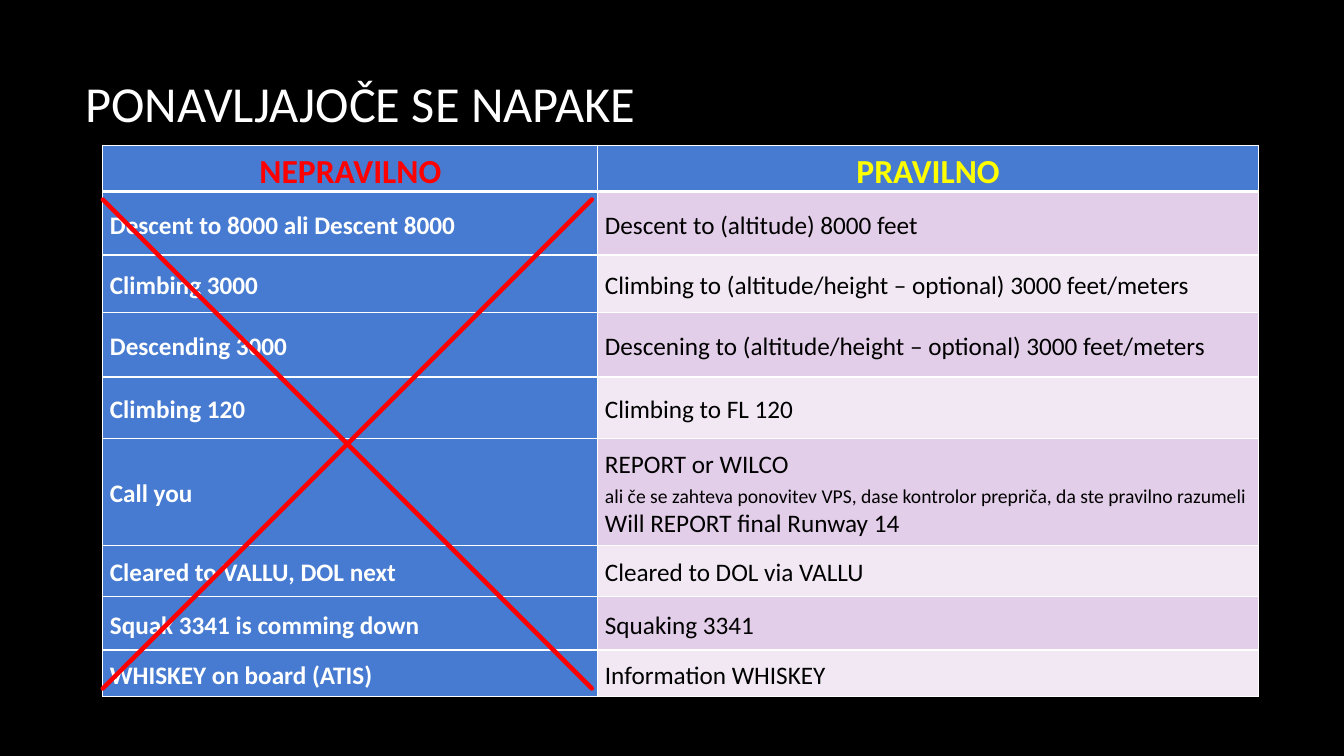
from lxml import etree
from pptx import Presentation
from pptx.dml.color import RGBColor
from pptx.enum.shapes import MSO_CONNECTOR
from pptx.enum.text import MSO_ANCHOR, PP_ALIGN
from pptx.oxml.ns import qn
from pptx.util import Inches, Pt

MIDDLE = MSO_ANCHOR.MIDDLE
LEFT, CENTER = PP_ALIGN.LEFT, PP_ALIGN.CENTER
STRAIGHT = MSO_CONNECTOR.STRAIGHT

BLACK = RGBColor(0x00, 0x00, 0x00)
WHITE = RGBColor(0xFF, 0xFF, 0xFF)
RED = RGBColor(0xFF, 0x00, 0x00)
YELLOW = RGBColor(0xFF, 0xFF, 0x00)
BLUE = RGBColor(0x47, 0x7B, 0xD1)
LILAC = RGBColor(0xE3, 0xCE, 0xE9)
PALE_LILAC = RGBColor(0xF1, 0xE8, 0xF4)
FONT = "Calibri"

# Content: the header, then (wrong, right lines, row height, paragraph spacing)
TITLE = "PONAVLJAJOČE SE NAPAKE"
HEADER = [("NEPRAVILNO", RED), ("PRAVILNO", YELLOW)]
HEADER_HEIGHT = 0.46
PHRASES = [
    ("Descent to 8000 ali Descent 8000",
     [("Descent to (altitude) 8000 feet", 18)], 0.63, 6),
    ("Climbing 3000",
     [("Climbing to (altitude/height – optional) 3000 feet/meters", 18)], 0.57, 3),
    ("Descending 3000",
     [("Descening to (altitude/height – optional) 3000 feet/meters", 18)], 0.64, 3),
    ("Climbing 120", [("Climbing to FL 120", 18)], 0.61, 6),
    ("Call you",
     [("REPORT or WILCO", 18),
      ("ali če se zahteva ponovitev VPS, dase kontrolor prepriča, "
       "da ste pravilno razumeli", 14),
      ("Will REPORT final Runway 14", 18)], 1.06, 3),
    ("Cleared to VALLU, DOL next", [("Cleared to DOL via VALLU", 18)], 0.51, 3),
    ("Squak 3341 is comming down", [("Squaking 3341", 18)], 0.53, 3),
    ("WHISKEY on board (ATIS)", [("Information WHISKEY", 18)], 0.46, 3),
]

# Layout in inches
TABLE_LEFT, TABLE_TOP = 1.02, 1.44
COLUMNS = [4.91, 6.55]
ROWS = [HEADER_HEIGHT] + [phrase[2] for phrase in PHRASES]
CROSS_LEFT, CROSS_TOP, CROSS_SIZE = TABLE_LEFT, 1.98, 4.85


def style_font(font, size, color, bold=False):
    font.name, font.size, font.bold = FONT, Pt(size), bold
    font.color.rgb = color


def add_border(cell, side, width):
    properties = cell._tc.get_or_add_tcPr()
    line = etree.SubElement(properties, qn(f"a:ln{side}"), w=str(Pt(width)))
    fill = etree.SubElement(line, qn("a:solidFill"))
    etree.SubElement(fill, qn("a:srgbClr"), val=str(WHITE))


def fill_cell(cell, lines, fill, color, bold, spacing, align=LEFT, top=1, bottom=1):
    for side, width in (("L", 1), ("R", 1), ("T", top), ("B", bottom)):
        add_border(cell, side, width)
    cell.fill.solid()
    cell.fill.fore_color.rgb = fill
    cell.vertical_anchor = MIDDLE
    cell.margin_left = cell.margin_right = Inches(0.07)
    cell.margin_top = cell.margin_bottom = 0
    frame = cell.text_frame
    for index, (text, size) in enumerate(lines):
        para = frame.add_paragraph() if index else frame.paragraphs[0]
        para.text, para.alignment = text, align
        style_font(para.font, size, color, bold)
        if index == 0:
            para.line_spacing = 1.15
            para.space_before = para.space_after = Pt(spacing)


deck = Presentation()
deck.slide_width, deck.slide_height = Inches(13.33), Inches(7.5)
page = deck.slides.add_slide(deck.slide_layouts[6])
page.background.fill.solid()
page.background.fill.fore_color.rgb = BLACK

# Title
box = page.shapes.add_textbox(Inches(0.75), Inches(0.67), Inches(11.08), Inches(0.77))
box.text_frame.word_wrap = True
box.text_frame.vertical_anchor = MIDDLE
heading = box.text_frame.paragraphs[0]
heading.text = TITLE
heading.line_spacing = 0.9
style_font(heading.font, 36, WHITE)

# Table of wrong and right phrases
table = page.shapes.add_table(
    len(ROWS), len(COLUMNS), Inches(TABLE_LEFT), Inches(TABLE_TOP),
    Inches(sum(COLUMNS)), Inches(sum(ROWS))).table
for column, width in zip(table.columns, COLUMNS):
    column.width = Inches(width)
for row, height in zip(table.rows, ROWS):
    row.height = Inches(height)
for index, (text, color) in enumerate(HEADER):
    fill_cell(table.cell(0, index), [(text, 24)], BLUE, color, True, 3, CENTER, bottom=3)
for index, (wrong, right, _, spacing) in enumerate(PHRASES, start=1):
    top = 3 if index == 1 else 1
    band = LILAC if index % 2 else PALE_LILAC
    fill_cell(table.cell(index, 0), [(wrong, 18)], BLUE, WHITE, True, spacing, top=top)
    fill_cell(table.cell(index, 1), right, band, BLACK, False, spacing, top=top)

# Red cross over the wrong phrases
cross_right, cross_bottom = CROSS_LEFT + CROSS_SIZE, CROSS_TOP + CROSS_SIZE
for start, end in ((cross_right, CROSS_LEFT), (CROSS_LEFT, cross_right)):
    stroke = page.shapes.add_connector(
        STRAIGHT, Inches(start), Inches(CROSS_TOP), Inches(end), Inches(cross_bottom))
    stroke.line.color.rgb = RED
    stroke.line.width = Pt(3.25)
    properties = stroke._element.spPr
    properties.find(qn("a:ln")).set("cap", "rnd")
    etree.SubElement(properties, qn("a:effectLst"))

deck.save("out.pptx")
